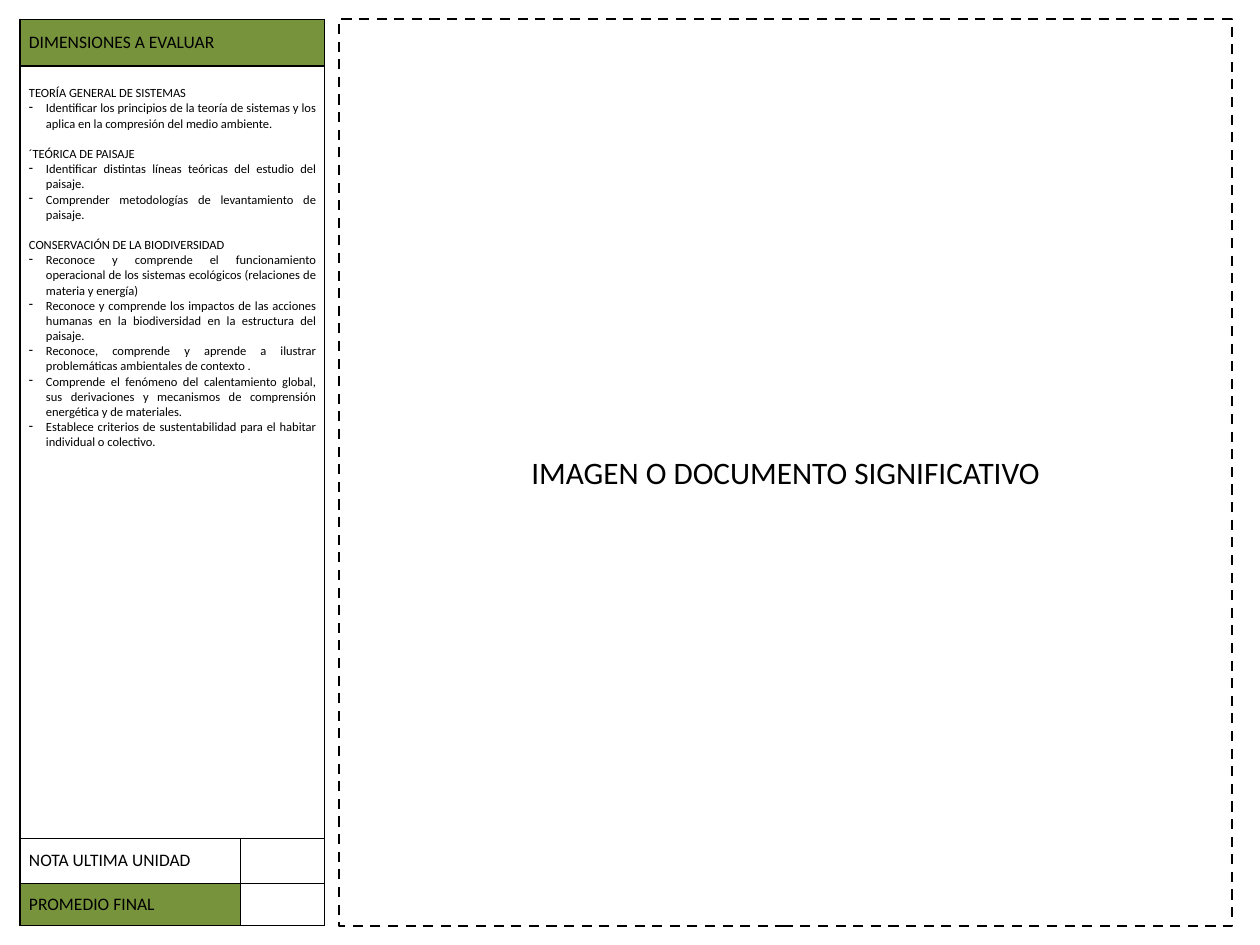
"""Build the evaluation sheet: a dimensions table beside a dashed frame for a significant image."""
from lxml.etree import SubElement
from pptx import Presentation
from pptx.dml.color import RGBColor
from pptx.enum.dml import MSO_LINE
from pptx.enum.shapes import MSO_SHAPE
from pptx.enum.text import MSO_ANCHOR, PP_ALIGN
from pptx.oxml.ns import qn
from pptx.util import Pt

COLORS = {"green": "77933C", "white": "FFFFFF", "black": "000000"}
FONT = "Calibri"
HEADING = "DIMENSIONES A EVALUAR"
DIMENSIONS = [
    ("TEORÍA GENERAL DE SISTEMAS", [
        "Identificar los principios de la teoría de sistemas y los aplica en la compresión del medio ambiente.",
    ]),
    ("´TEÓRICA DE PAISAJE", [
        "Identificar distintas líneas teóricas del estudio del paisaje.",
        "Comprender metodologías de levantamiento de paisaje.",
    ]),
    ("CONSERVACIÓN DE LA BIODIVERSIDAD", [
        "Reconoce y comprende el funcionamiento operacional de los sistemas ecológicos (relaciones de materia y energía)",
        "Reconoce y comprende los impactos de las acciones humanas en la biodiversidad en la estructura del paisaje.",
        "Reconoce, comprende y aprende a ilustrar problemáticas ambientales de contexto .",
        "Comprende el fenómeno del calentamiento global, sus derivaciones y mecanismos de comprensión energética y de materiales.",
        "Establece criterios de sustentabilidad para el habitar individual o colectivo.",
    ]),
]
GRADES = [("NOTA ULTIMA UNIDAD", "white"), ("PROMEDIO FINAL", "green")]
FRAME_TEXT = "IMAGEN O DOCUMENTO SIGNIFICATIVO"

SLIDE_W, SLIDE_H = 1260, 945
TOP, HEIGHT = 19, 907
TABLE_LEFT, COLUMNS, ROWS = 20, [220, 85], [47, 773, 44, 43]
FRAME_LEFT, FRAME_W = 339, 893
INDENT = 17
LIST_TOP_MARGIN = 20
LINE_GAP = Pt(12.2)


def px(length):
    return length * 10160


def rgb(name):
    return RGBColor.from_string(COLORS[name])


def write(paragraph, text, size, align=PP_ALIGN.JUSTIFY):
    paragraph.text = text
    paragraph.alignment = align
    paragraph.font.name = FONT
    paragraph.font.size = Pt(size)
    paragraph.font.color.rgb = rgb("black")


def add_dash(paragraph):
    properties = paragraph._p.get_or_add_pPr()
    properties.set("marL", str(px(INDENT)))
    properties.set("indent", str(-px(INDENT)))
    bullet = properties.makeelement(qn("a:buChar"), {"char": "-"})
    properties.insert_element_before(bullet, "a:tabLst", "a:defRPr", "a:extLst")


def set_borders(cell, widths):
    properties = cell._tc.get_or_add_tcPr()
    for position, (side, width) in enumerate(widths.items()):
        line = properties.makeelement(qn(f"a:ln{side}"), {"w": str(Pt(width))})
        fill = SubElement(line, qn("a:solidFill"))
        SubElement(fill, qn("a:srgbClr"), val=COLORS["black"])
        properties.insert(position, line)


def write_label(cell, text, fill):
    write(cell.text_frame.paragraphs[0], text, 14)
    cell.vertical_anchor = MSO_ANCHOR.MIDDLE
    cell.fill.solid()
    cell.fill.fore_color.rgb = rgb(fill)


def write_dimensions(cell):
    cell.margin_top = px(LIST_TOP_MARGIN)
    frame = cell.text_frame
    for number, (dimension, goals) in enumerate(DIMENSIONS):
        title = frame.add_paragraph() if number else frame.paragraphs[0]
        write(title, dimension, 10)
        if number:
            title.space_before = LINE_GAP
        for goal in goals:
            item = frame.add_paragraph()
            write(item, goal, 10)
            add_dash(item)


def add_evaluation(slide):
    table = slide.shapes.add_table(
        len(ROWS), len(COLUMNS), px(TABLE_LEFT), px(TOP), px(sum(COLUMNS)), px(HEIGHT)
    ).table
    table.first_row = table.horz_banding = False
    for column, width in zip(table.columns, COLUMNS):
        column.width = px(width)
    for row, height in zip(table.rows, ROWS):
        row.height = px(height)

    rules = [0.5, 1, 1, 0.5, 1]
    uprights = [1, 0.5, 1]
    for r in range(len(ROWS)):
        for c in range(len(COLUMNS)):
            cell = table.cell(r, c)
            cell.fill.solid()
            cell.fill.fore_color.rgb = rgb("white")
            right = 1 if r < 2 else uprights[c + 1]
            set_borders(cell, {"L": uprights[c], "R": right, "T": rules[r], "B": rules[r + 1]})
    for r in (0, 1):
        table.cell(r, 0).merge(table.cell(r, 1))

    write_label(table.cell(0, 0), HEADING, "green")
    write_dimensions(table.cell(1, 0))
    for r, (label, fill) in enumerate(GRADES, start=2):
        write_label(table.cell(r, 0), label, fill)


def add_image_frame(slide):
    frame = slide.shapes.add_shape(
        MSO_SHAPE.RECTANGLE, px(FRAME_LEFT), px(TOP), px(FRAME_W), px(HEIGHT)
    )
    frame.shadow.inherit = False
    frame.fill.background()
    frame.line.color.rgb = rgb("black")
    frame.line.width = Pt(2)
    frame.line.dash_style = MSO_LINE.DASH
    frame.text_frame.word_wrap = True
    frame.text_frame.vertical_anchor = MSO_ANCHOR.MIDDLE
    write(frame.text_frame.paragraphs[0], FRAME_TEXT, 25, PP_ALIGN.CENTER)


def main():
    deck = Presentation()
    deck.slide_width, deck.slide_height = px(SLIDE_W), px(SLIDE_H)
    slide = deck.slides.add_slide(deck.slide_layouts[6])
    add_evaluation(slide)
    add_image_frame(slide)
    deck.save("out.pptx")


if __name__ == "__main__":
    main()
